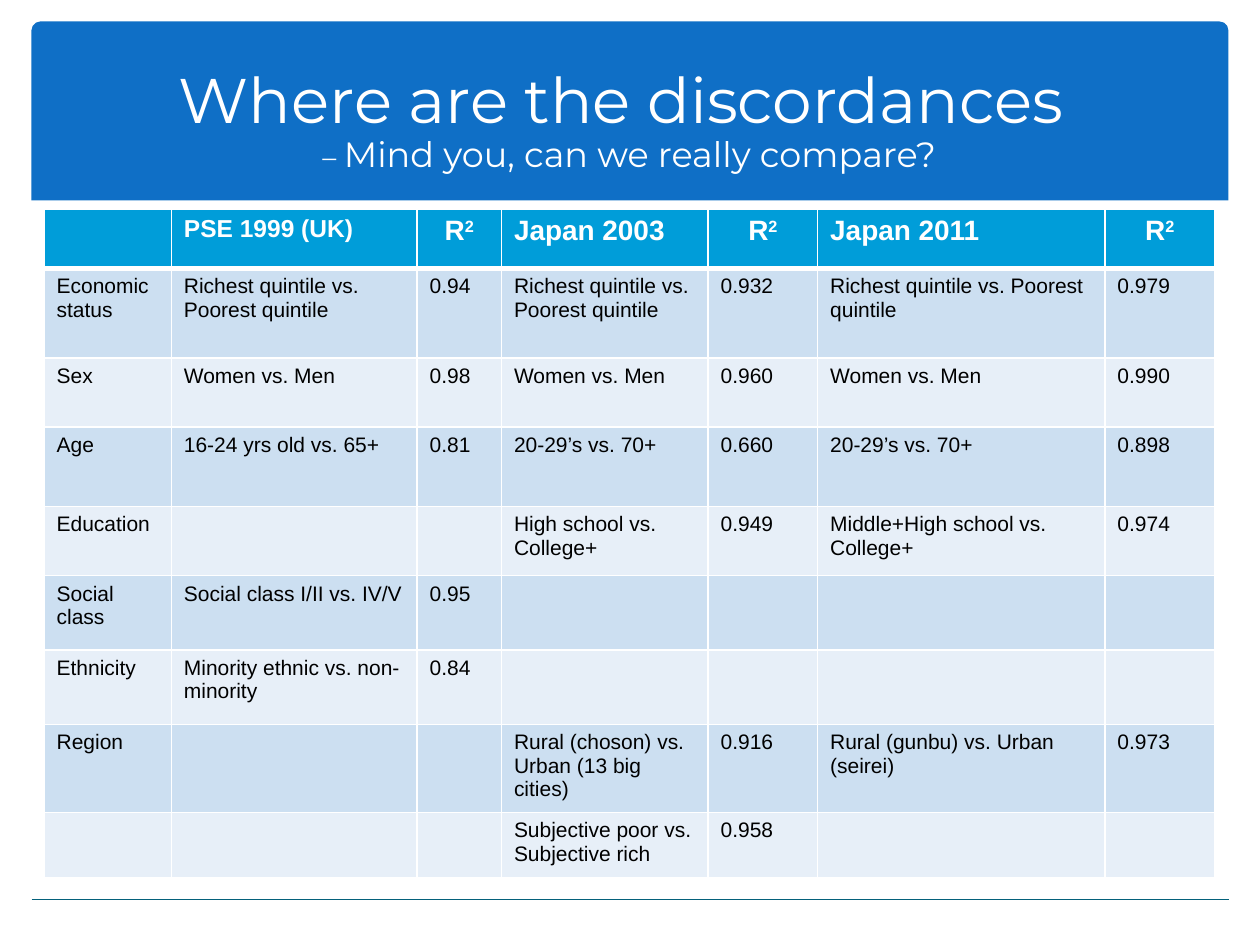
from dataclasses import dataclass

import pptx
import pptx.dml.color
import pptx.enum.shapes
import pptx.enum.text
import pptx.oxml
import pptx.oxml.ns
import pptx.util
from pptx.util import Inches


@dataclass(frozen=True)
class Theme:
    banner: str = "0F6FC6"
    rule: str = "04617B"
    header: str = "009DD9"
    bands: tuple[str, str] = ("CCDFF1", "E7EFF8")
    white: str = "FFFFFF"
    black: str = "000000"
    title_font: str = "Montserrat"
    table_font: str = "Arial"
    title_size: int = 36
    dash_size: int = 16
    subtitle_size: int = 20
    header_size: int = 16
    study_size: int = 14
    body_size: int = 12


@dataclass(frozen=True)
class Comparison:
    topic: str
    height: float
    uk: tuple[str, str] = ("", "")
    japan_2003: tuple[str, str] = ("", "")
    japan_2011: tuple[str, str] = ("", "")

    def texts(self) -> tuple[str, ...]:
        return (self.topic, *self.uk, *self.japan_2003, *self.japan_2011)


THEME = Theme()
R_SQUARED = "R2"
COLUMN_WIDTHS = (1.01, 1.95, 0.67, 1.64, 0.87, 2.28, 0.87)
HEADER_HEIGHT = 0.47
HEADINGS = ("", "PSE 1999 (UK)", R_SQUARED, "Japan 2003", R_SQUARED, "Japan 2011", R_SQUARED)
QUINTILES = "Richest quintile vs. Poorest quintile"
COMPARISONS = (
    Comparison("Economic status", 0.71, (QUINTILES, "0.94"), (QUINTILES, "0.932"),
               (QUINTILES, "0.979")),
    Comparison("Sex", 0.55, ("Women vs. Men", "0.98"), ("Women vs. Men", "0.960"),
               ("Women vs. Men", "0.990")),
    Comparison("Age", 0.63, ("16-24 yrs old vs. 65+", "0.81"), ("20-29’s vs. 70+", "0.660"),
               ("20-29’s vs. 70+", "0.898")),
    Comparison("Education", 0.55, japan_2003=("High school vs. College+", "0.949"),
               japan_2011=("Middle+High school vs. College+", "0.974")),
    Comparison("Social class", 0.59, uk=("Social class I/II vs. IV/V", "0.95")),
    Comparison("Ethnicity", 0.59, uk=("Minority ethnic vs. non-minority", "0.84")),
    Comparison("Region", 0.63, japan_2003=("Rural (choson) vs. Urban (13 big cities)", "0.916"),
               japan_2011=("Rural (gunbu) vs. Urban (seirei)", "0.973")),
    Comparison("", 0.52, japan_2003=("Subjective poor vs. Subjective rich", "0.958")),
)


def rgb(color: str) -> pptx.dml.color.RGBColor:
    return pptx.dml.color.RGBColor.from_string(color)


def set_font(font, name: str, size: int, color: str, bold: bool = False) -> None:
    font.name = name
    font.size = pptx.util.Pt(size)
    font.color.rgb = rgb(color)
    font.bold = bold


def draw_frame(slide) -> None:
    banner = slide.shapes.add_shape(
        pptx.enum.shapes.MSO_SHAPE.ROUND_2_SAME_RECTANGLE,
        Inches(0.25), Inches(0.17), Inches(9.5), Inches(1.42))
    banner.adjustments[0] = 0.05
    banner.adjustments[1] = 0
    banner.shadow.inherit = False
    banner.fill.solid()
    banner.fill.fore_color.rgb = rgb(THEME.banner)
    banner.line.fill.background()

    rule = slide.shapes.add_connector(
        pptx.enum.shapes.MSO_CONNECTOR.STRAIGHT,
        Inches(0.25), Inches(7.14), Inches(9.75), Inches(7.14))
    rule.line.color.rgb = rgb(THEME.rule)
    rule.line.width = pptx.util.Pt(1)
    rule._element.spPr.append(pptx.oxml.parse_xml(
        f"<a:effectLst {pptx.oxml.ns.nsdecls('a')}/>"))


def draw_title(slide) -> None:
    title = slide.shapes.add_textbox(Inches(0.33), Inches(0.3), Inches(9.33), Inches(1.25))
    frame = title.text_frame
    frame.word_wrap = True
    frame.vertical_anchor = pptx.enum.text.MSO_ANCHOR.MIDDLE
    frame.margin_top = Inches(0.13)
    paragraph = frame.paragraphs[0]
    paragraph.alignment = pptx.enum.text.PP_ALIGN.CENTER
    paragraph.line_spacing = 0.9
    set_font(paragraph.font, THEME.title_font, THEME.title_size, THEME.white)
    paragraph.add_run().text = "Where are the discordances "
    paragraph.add_line_break()
    for text, size in (("– ", THEME.dash_size),
                       ("Mind you, can we really compare?", THEME.subtitle_size)):
        run = paragraph.add_run()
        run.text = text
        run.font.size = pptx.util.Pt(size)


def set_borders(cell, bottom_width: int) -> None:
    properties = cell._tc.get_or_add_tcPr()
    widths = {"lnL": 1, "lnR": 1, "lnT": 1, "lnB": bottom_width}
    for position, (side, width) in enumerate(widths.items()):
        properties.insert(position, pptx.oxml.parse_xml(
            f'<a:{side} {pptx.oxml.ns.nsdecls("a")} w="{pptx.util.Pt(width)}">'
            f'<a:solidFill><a:srgbClr val="{THEME.white}"/></a:solidFill></a:{side}>'))


def fill_cell(cell, text: str, fill: str, size: int, color: str, is_header: bool) -> None:
    cell.fill.solid()
    cell.fill.fore_color.rgb = rgb(fill)
    set_borders(cell, 3 if is_header else 1)
    paragraph = cell.text_frame.paragraphs[0]
    set_font(paragraph.font, THEME.table_font, size, color, is_header)
    if text == R_SQUARED:
        paragraph.alignment = pptx.enum.text.PP_ALIGN.CENTER
        paragraph.add_run().text = "R"
        exponent = paragraph.add_run()
        exponent.text = "2"
        exponent.font._element.set("baseline", "30000")
    elif text:
        paragraph.add_run().text = text


def draw_table(slide) -> None:
    heights = (HEADER_HEIGHT, *(comparison.height for comparison in COMPARISONS))
    table = slide.shapes.add_table(
        len(heights), len(COLUMN_WIDTHS), Inches(0.35), Inches(1.66),
        Inches(sum(COLUMN_WIDTHS)), Inches(sum(heights))).table
    for column, width in zip(table.columns, COLUMN_WIDTHS):
        column.width = Inches(width)
    for row, height in zip(table.rows, heights):
        row.height = Inches(height)

    # Header row
    for index, heading in enumerate(HEADINGS):
        size = THEME.study_size if index == 1 else THEME.header_size
        fill_cell(table.cell(0, index), heading, THEME.header, size, THEME.white, True)

    # Banded body rows
    for row_index, comparison in enumerate(COMPARISONS):
        for index, text in enumerate(comparison.texts()):
            fill_cell(table.cell(row_index + 1, index), text, THEME.bands[row_index % 2],
                      THEME.body_size, THEME.black, False)


def main() -> None:
    presentation = pptx.Presentation()
    presentation.slide_width = Inches(10)
    presentation.slide_height = Inches(7.5)
    slide = presentation.slides.add_slide(presentation.slide_layouts[6])
    draw_frame(slide)
    draw_title(slide)
    draw_table(slide)
    presentation.save("out.pptx")


if __name__ == "__main__":
    main()
